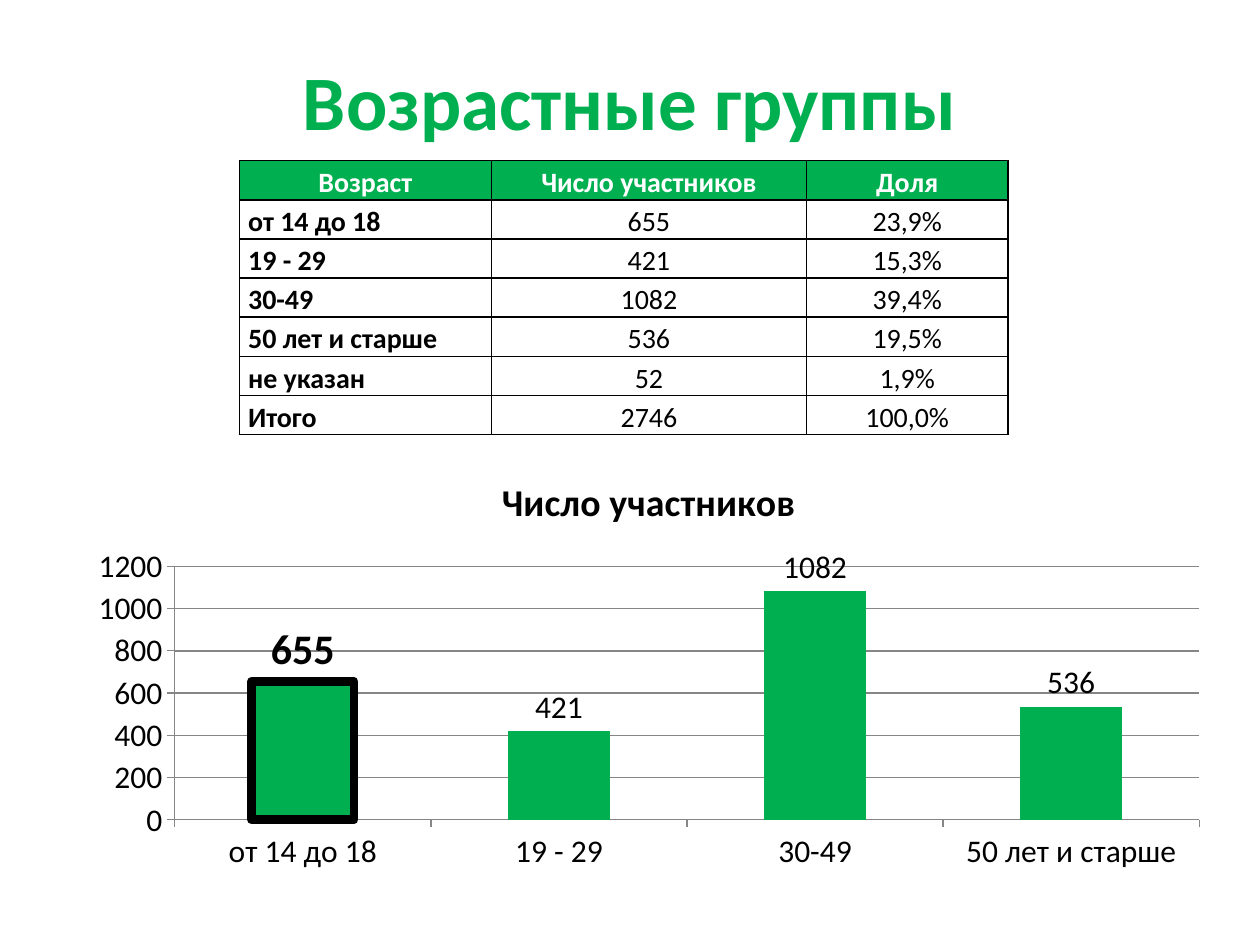
from lxml.etree import SubElement
from pptx import Presentation
from pptx.chart.data import CategoryChartData
from pptx.dml.color import RGBColor
from pptx.enum.chart import XL_CHART_TYPE, XL_LABEL_POSITION, XL_TICK_MARK
from pptx.enum.text import MSO_ANCHOR, PP_ALIGN
from pptx.oxml.ns import qn
from pptx.util import Inches, Pt

COLOURS = {"green": "00B050", "black": "000000", "white": "FFFFFF", "grey": "868686"}
HEADERS = ["Возраст", "Число участников", "Доля"]
AGE_GROUPS = [
    ("от 14 до 18", 655, "23,9%"),
    ("19 - 29", 421, "15,3%"),
    ("30-49", 1082, "39,4%"),
    ("50 лет и старше", 536, "19,5%"),
    ("не указан", 52, "1,9%"),
    ("Итого", 2746, "100,0%"),
]
CHARTED_GROUPS = AGE_GROUPS[:4]


class SlideBuilder:
    font_name = "Calibri"

    def __init__(self, deck):
        self.deck = deck
        self.slide = deck.slides.add_slide(deck.slide_layouts[6])

    def colour(self, name):
        return RGBColor.from_string(COLOURS[name])

    def area(self, left, top, width, height):
        across, down = self.deck.slide_width, self.deck.slide_height
        return int(left * across), int(top * down), int(width * across), int(height * down)

    def style_font(self, font, size, colour="black", bold=False):
        font.name = self.font_name
        font.size = Pt(size)
        font.bold = bold
        font.color.rgb = self.colour(colour)

    def add_text(self, para, text, size, colour="black", bold=False, align=PP_ALIGN.CENTER):
        para.alignment = align
        span = para.add_run()
        span.text = text
        self.style_font(span.font, size, colour, bold)

    def title(self, text, *shares):
        box = self.slide.shapes.add_textbox(*self.area(*shares))
        box.text_frame.word_wrap = True
        box.text_frame.vertical_anchor = MSO_ANCHOR.MIDDLE
        self.add_text(box.text_frame.paragraphs[0], text, 44, "green", True)

    def cell(self, cell, text, is_header, is_label):
        cell.margin_left = cell.margin_right = Inches(0.07)
        cell.margin_top = cell.margin_bottom = 0
        cell.vertical_anchor = MSO_ANCHOR.MIDDLE if is_header else MSO_ANCHOR.BOTTOM
        para = cell.text_frame.paragraphs[0]
        para.line_spacing = 1.15
        align = PP_ALIGN.LEFT if is_label and not is_header else PP_ALIGN.CENTER
        colour = "white" if is_header else "black"
        self.add_text(para, text, 16, colour, is_header or is_label, align)
        properties = cell._tc.get_or_add_tcPr()
        for side in ("a:lnL", "a:lnR", "a:lnT", "a:lnB"):
            line = SubElement(properties, qn(side), w=str(Pt(1)))
            fill = SubElement(line, qn("a:solidFill"))
            SubElement(fill, qn("a:srgbClr"), val=COLOURS["black"])
        if is_header:
            cell.fill.solid()
            cell.fill.fore_color.rgb = self.colour("green")
        else:
            cell.fill.background()

    def table(self, rows, column_shares, *shares):
        frame = self.slide.shapes.add_table(len(rows), len(rows[0]), *self.area(*shares))
        table = frame.table
        table.horz_banding = False
        for column, share in zip(table.columns, column_shares):
            column.width = int(share * self.deck.slide_width)
        for row_index, row in enumerate(rows):
            for column_index, value in enumerate(row):
                self.cell(table.cell(row_index, column_index), str(value),
                          row_index == 0, column_index == 0)

    def axis(self, axis):
        axis.major_tick_mark = XL_TICK_MARK.OUTSIDE
        axis.minor_tick_mark = XL_TICK_MARK.NONE
        self.style_font(axis.tick_labels.font, 18)
        axis.format.line.color.rgb = self.colour("grey")
        axis.format.line.width = Pt(0.75)

    def column_chart(self, name, groups, *shares):
        data = CategoryChartData()
        data.categories = [label for label, _, _ in groups]
        data.add_series(name, [count for _, count, _ in groups])
        chart = self.slide.shapes.add_chart(
            XL_CHART_TYPE.COLUMN_CLUSTERED, *self.area(*shares), data).chart
        self.style_font(chart.font, 18)
        chart.has_legend = False
        chart.has_title = True
        self.add_text(chart.chart_title.text_frame.paragraphs[0], name, 21.6, bold=True)
        self.axis(chart.category_axis)
        self.axis(chart.value_axis)
        chart.value_axis.minimum_scale = 0
        chart.value_axis.maximum_scale = 1200
        chart.value_axis.major_unit = 200
        gridlines = chart.value_axis.major_gridlines.format.line
        gridlines.color.rgb = self.colour("grey")
        gridlines.width = Pt(0.75)
        plot = chart.plots[0]
        plot.vary_by_categories = False
        plot.gap_width = 150
        series = plot.series[0]
        series.format.fill.solid()
        series.format.fill.fore_color.rgb = self.colour("green")
        labels = series.data_labels
        labels.show_value = True
        labels.position = XL_LABEL_POSITION.OUTSIDE_END
        self.style_font(labels.font, 18)
        return series

    def highlight(self, point):
        point.format.fill.solid()
        point.format.fill.fore_color.rgb = self.colour("green")
        point.format.line.color.rgb = self.colour("black")
        point.format.line.width = Pt(5)
        self.style_font(point.data_label.font, 24, bold=True)
        point.data_label.position = XL_LABEL_POSITION.OUTSIDE_END


def main():
    deck = Presentation()
    deck.slide_width, deck.slide_height = Inches(10), Inches(7.5)
    page = SlideBuilder(deck)
    page.title("Возрастные группы", 0.05, 0.02, 0.9, 0.17)
    page.table([HEADERS, *AGE_GROUPS], (0.2, 0.25, 0.16), 0.19, 0.17, 0.62, 0.29)
    series = page.column_chart(HEADERS[1], CHARTED_GROUPS, 0.06, 0.48, 0.91, 0.45)
    page.highlight(series.points[0])
    deck.save("out.pptx")


if __name__ == "__main__":
    main()
